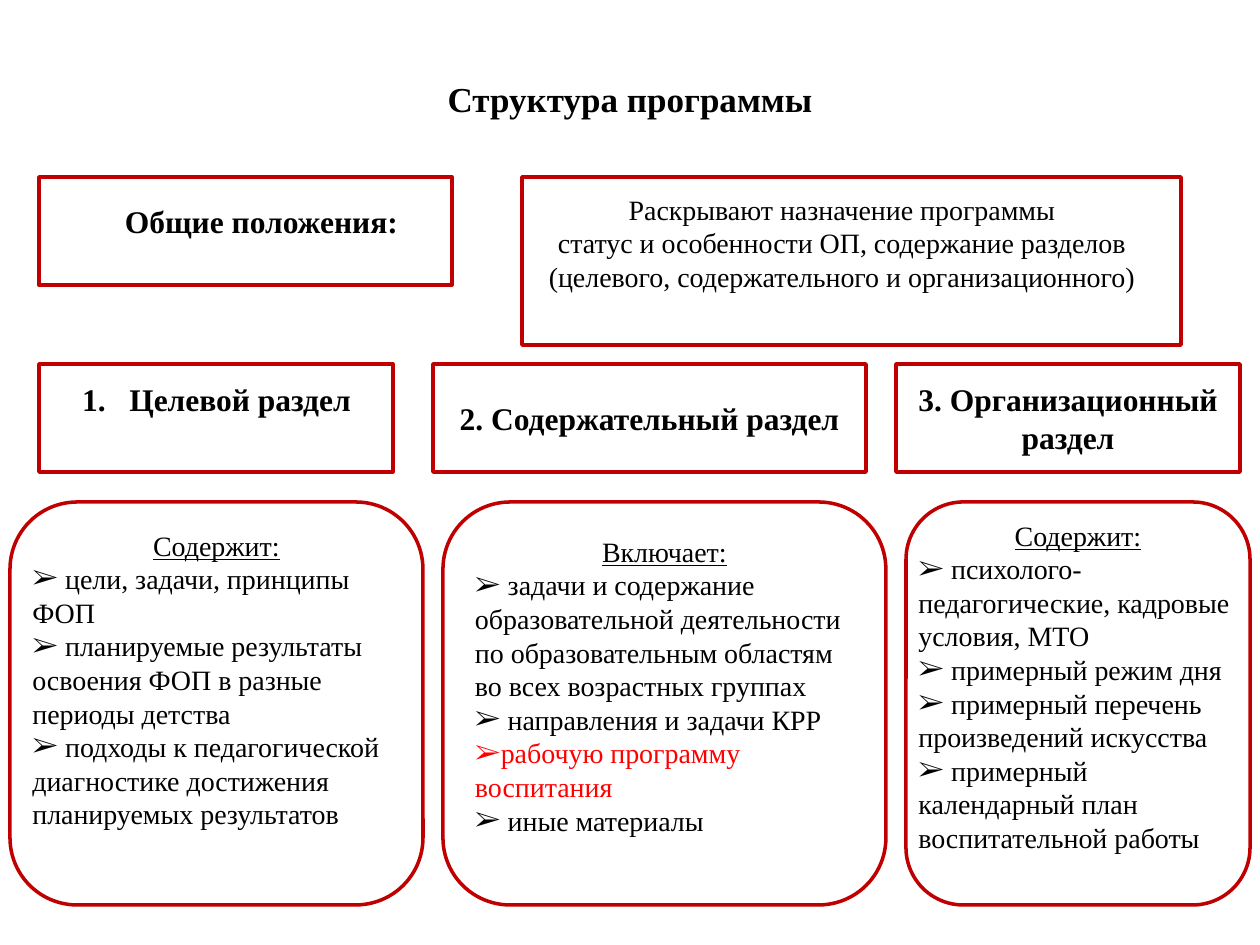
from lxml import etree
from pptx import Presentation
from pptx import util as u
from pptx.dml.color import RGBColor
from pptx.enum import shapes, text
from pptx.oxml import ns

SCALE = 914400 / 126
FONT = "Times New Roman"
BLACK = RGBColor(0, 0, 0)
WHITE = RGBColor(255, 255, 255)
DARK = RGBColor(192, 0, 0)
RED = RGBColor(255, 0, 0)
RECT = shapes.MSO_SHAPE.RECTANGLE
ROUND = shapes.MSO_SHAPE.ROUNDED_RECTANGLE
MID = text.MSO_ANCHOR.MIDDLE
TOP = text.MSO_ANCHOR.TOP


def px(n):
    return u.Emu(round(n * SCALE))


def panel(slide, kind, box, fill=None):
    shape = slide.shapes.add_shape(kind, *map(px, box))
    shape.shadow.inherit = False
    if fill is None:
        shape.fill.background()
    else:
        shape.fill.solid()
        shape.fill.fore_color.rgb = fill
    shape.line.color.rgb = DARK
    shape.line.width = u.Pt(2)
    return shape


def frame(slide, shape, box, pad):
    if pad is None:
        area = shape.text_frame
        area.vertical_anchor = MID
    else:
        left, top, wide = pad
        spot = (box[0] + left, box[1] + top, wide, box[3] - 2 * top)
        area = slide.shapes.add_textbox(*map(px, spot)).text_frame
        area.vertical_anchor = TOP
    area.word_wrap = True
    return area


def mark(para, tag, indent=0, **attrs):
    props = para._p.get_or_add_pPr()
    props.set("marL", str(indent))
    props.set("indent", str(-indent))
    if tag == "a:buChar":
        etree.SubElement(props, ns.qn("a:buFont"), typeface=FONT)
    etree.SubElement(props, ns.qn(tag), **attrs)


def style(para, size, bold=False, line=False, color=BLACK):
    font = para.font
    font.name = FONT
    font.size = u.Pt(size)
    font.bold = bold
    font.underline = line
    font.color.rgb = color


def center(area, lines, size, bold=False, line=False):
    for i, words in enumerate(lines):
        para = area.paragraphs[0] if i == 0 else area.add_paragraph()
        para.text = words
        para.alignment = text.PP_ALIGN.CENTER
        style(para, size, bold, line)


def title(slide, box, words):
    area = frame(slide, None, box, (0, 0, box[2]))
    area.vertical_anchor = MID
    center(area, [words], 20, bold=True)


def intro(slide, box, pad, lines, size, bold=False):
    shape = panel(slide, RECT, box)
    center(frame(slide, shape, box, pad), lines, size, bold)


def header(slide, box, words, pad=None, number=False):
    shape = panel(slide, RECT, box, WHITE if number else None)
    area = frame(slide, shape, box, pad)
    if number:
        mark(area.paragraphs[0], "a:buAutoNum", 342900, type="arabicPeriod")
    center(area, [words], 18, bold=True)


def body(slide, box, lead, items, pad=None):
    shape = panel(slide, ROUND, box)
    area = frame(slide, shape, box, pad)
    if pad is None:
        area.margin_bottom = px(42)
    center(area, [lead], 16, line=True)
    for words, color in items:
        para = area.add_paragraph()
        para.text = words
        para.alignment = text.PP_ALIGN.LEFT
        mark(para, "a:buChar", char="➢")
        style(para, 16, color=color)


def main():
    deck = Presentation()
    deck.slide_width, deck.slide_height = px(1260), px(945)
    slide = deck.slides.add_slide(deck.slide_layouts[6])

    title(slide, (63, 38, 1134, 120), "Структура программы")
    intro(slide, (39, 177, 413, 108), (30, 19, 393),
          ["Общие положения: "], 18, bold=True)
    intro(slide, (522, 177, 659, 168), (0, 9, 640), [
        "Раскрывают назначение программы",
        "статус и особенности ОП, содержание разделов "
        "(целевого, содержательного и организационного)"], 16)

    header(slide, (39, 364, 354, 108), "Целевой раздел", (10, 10, 335), True)
    header(slide, (433, 364, 433, 108), "2. Содержательный раздел")
    header(slide, (896, 364, 344, 108), "3. Организационный раздел")

    body(slide, (10, 502, 413, 403), "Содержит:", [
        (" цели, задачи, принципы ФОП", BLACK),
        (" планируемые результаты освоения ФОП в разные периоды детства", BLACK),
        (" подходы к педагогической диагностике достижения "
         "планируемых результатов", BLACK)], (10, 20, 393))
    body(slide, (443, 502, 443, 403), "Включает:", [
        (" задачи и содержание образовательной деятельности "
         "по образовательным областям во всех возрастных группах", BLACK),
        (" направления и задачи КРР", BLACK),
        ("рабочую программу воспитания", RED),
        (" иные материалы", BLACK)])
    body(slide, (906, 502, 344, 403), "Содержит:", [
        (" психолого-педагогические, кадровые условия, МТО", BLACK),
        (" примерный режим дня", BLACK),
        (" примерный перечень произведений искусства", BLACK),
        (" примерный календарный план воспитательной работы", BLACK)],
        (0, 10, 344))

    deck.save("out.pptx")


if __name__ == "__main__":
    main()
